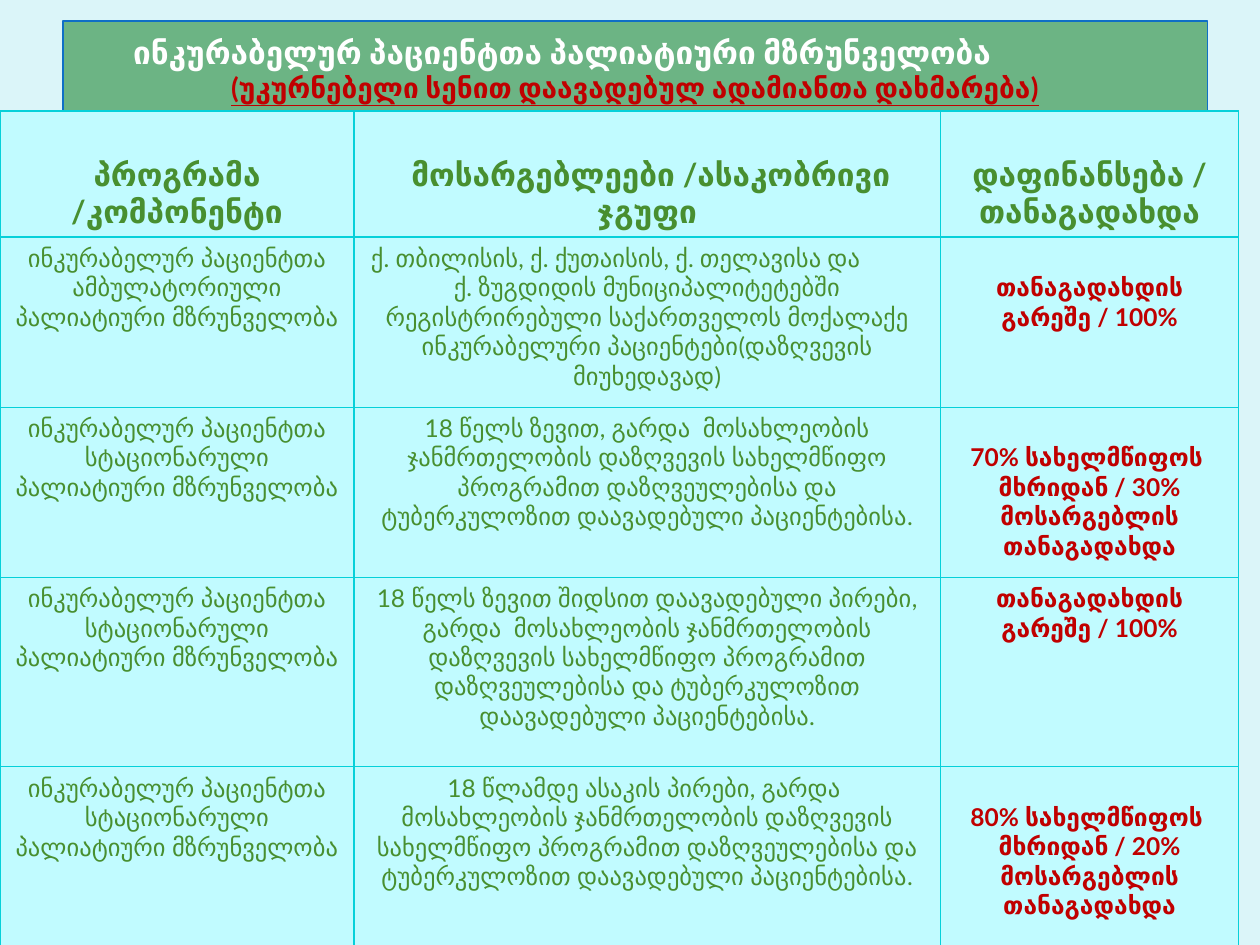
from pptx import Presentation
from pptx.dml.color import RGBColor
from pptx.enum import shapes, text
from pptx.oxml import parse_xml
from pptx.oxml.ns import nsdecls
from pptx.util import Pt

BACKGROUND = RGBColor(0xDB, 0xF5, 0xF9)
BANNER = RGBColor(0x6C, 0xB4, 0x84)
BANNER_LINE = RGBColor(0x0F, 0x6F, 0xC6)
CELL = RGBColor(0xC1, 0xFB, 0xFF)
BORDER = RGBColor(0x06, 0xD0, 0xD9)
GREEN = RGBColor(0x48, 0x8F, 0x30)
RED = RGBColor(0xC0, 0x00, 0x00)
WHITE = RGBColor(0xFF, 0xFF, 0xFF)


def write(p, words, size, color, bold, indent=None):
    """Centre the paragraph, or start it at the given left indent."""
    p.text = words
    p.alignment = text.PP_ALIGN.CENTER
    if indent is not None:
        p.alignment = text.PP_ALIGN.LEFT
        p._p.get_or_add_pPr().set("marL", str(Pt(indent)))
    f = p.font
    f.name, f.size, f.bold, f.color.rgb = "Lato", Pt(size), bold, color


def add_borders(cell):
    tc_pr = cell._tc.get_or_add_tcPr()
    for i, side in enumerate(("lnL", "lnR", "lnT", "lnB")):
        tc_pr.insert(i, parse_xml(
            f'<a:{side} {nsdecls("a")} w="{Pt(0.75)}"><a:solidFill>'
            f'<a:srgbClr val="{BORDER}"/></a:solidFill></a:{side}>'))


prs = Presentation()
prs.slide_width, prs.slide_height = Pt(720), Pt(540)
s = prs.slides.add_slide(prs.slide_layouts[6])
s.background.fill.solid()
s.background.fill.fore_color.rgb = BACKGROUND

# Title banner
sp = s.shapes.add_shape(shapes.MSO_SHAPE.RECTANGLE, Pt(36), Pt(12), Pt(654), Pt(54))
sp.shadow.inherit = False
sp.fill.solid()
sp.fill.fore_color.rgb = BANNER
sp.line.color.rgb = BANNER_LINE
sp.line.width = Pt(0.75)
tf = sp.text_frame
tf.word_wrap = True
tf.vertical_anchor = text.MSO_ANCHOR.MIDDLE
write(tf.paragraphs[0], "ინკურაბელურ პაციენტთა პალიატიური მზრუნველობა", 18, WHITE, True, 33)
p = tf.add_paragraph()
write(p, "(უკურნებელი სენით დაავადებულ ადამიანთა დახმარება)", 16, RED, True)
p.font.underline = True

# Programme table
INPATIENT = "ინკურაბელურ პაციენტთა სტაციონარული პალიატიური მზრუნველობა"
EXCEPT_INSURED = ("გარდა  მოსახლეობის ჯანმრთელობის დაზღვევის სახელმწიფო პროგრამით "
                  "დაზღვეულებისა და ტუბერკულოზით დაავადებული პაციენტებისა.")
FREE = "თანაგადახდის გარეშე / 100%"
SHARED = "{}% სახელმწიფოს  მხრიდან / {}% მოსარგებლის თანაგადახდა"
rows = [
    ("პროგრამა /კომპონენტი", " მოსარგებლეები /ასაკობრივი ჯგუფი", "დაფინანსება / თანაგადახდა"),
    ("ინკურაბელურ პაციენტთა ამბულატორიული პალიატიური მზრუნველობა",
     "ქ. თბილისის, ქ. ქუთაისის, ქ. თელავისა და\n"
     "ქ. ზუგდიდის მუნიციპალიტეტებში რეგისტრირებული საქართველოს მოქალაქე "
     "ინკურაბელური პაციენტები(დაზღვევის მიუხედავად)", FREE),
    (INPATIENT, "18 წელს ზევით, " + EXCEPT_INSURED, SHARED.format(70, 30)),
    (INPATIENT, "18 წელს ზევით შიდსით დაავადებული პირები, " + EXCEPT_INSURED, FREE),
    (INPATIENT, "18 წლამდე ასაკის პირები, " + EXCEPT_INSURED, SHARED.format(80, 20)),
]
widths = (202.3, 335, 170.7)
heights = (72, 97.2, 97.2, 108.3, 112.3)
AIDS_ROW = 3  # its funding text starts at the top of the cell

table = s.shapes.add_table(len(rows), len(widths), Pt(0), Pt(63.4),
                           Pt(sum(widths)), Pt(sum(heights))).table
for column, width in zip(table.columns, widths):
    column.width = Pt(width)
for i, (row, height) in enumerate(zip(rows, heights)):
    table.rows[i].height = Pt(height)
    for j, words in enumerate(row):
        cell = table.cell(i, j)
        cell.fill.solid()
        cell.fill.fore_color.rgb = CELL
        add_borders(cell)
        header, funding = i == 0, i > 0 and j == 2
        if header:
            cell.margin_top = Pt(25.2)
        elif funding and i != AIDS_ROW:
            cell.margin_top = Pt(20.4)
        lines = words.split("\n")
        for n, line in enumerate(lines):
            tf = cell.text_frame
            p = tf.add_paragraph() if n else tf.paragraphs[0]
            indent = 2.5 if n < len(lines) - 1 else None
            write(p, line, 18 if header else 14, RED if funding else GREEN,
                  header or funding, indent)

prs.save("out.pptx")
